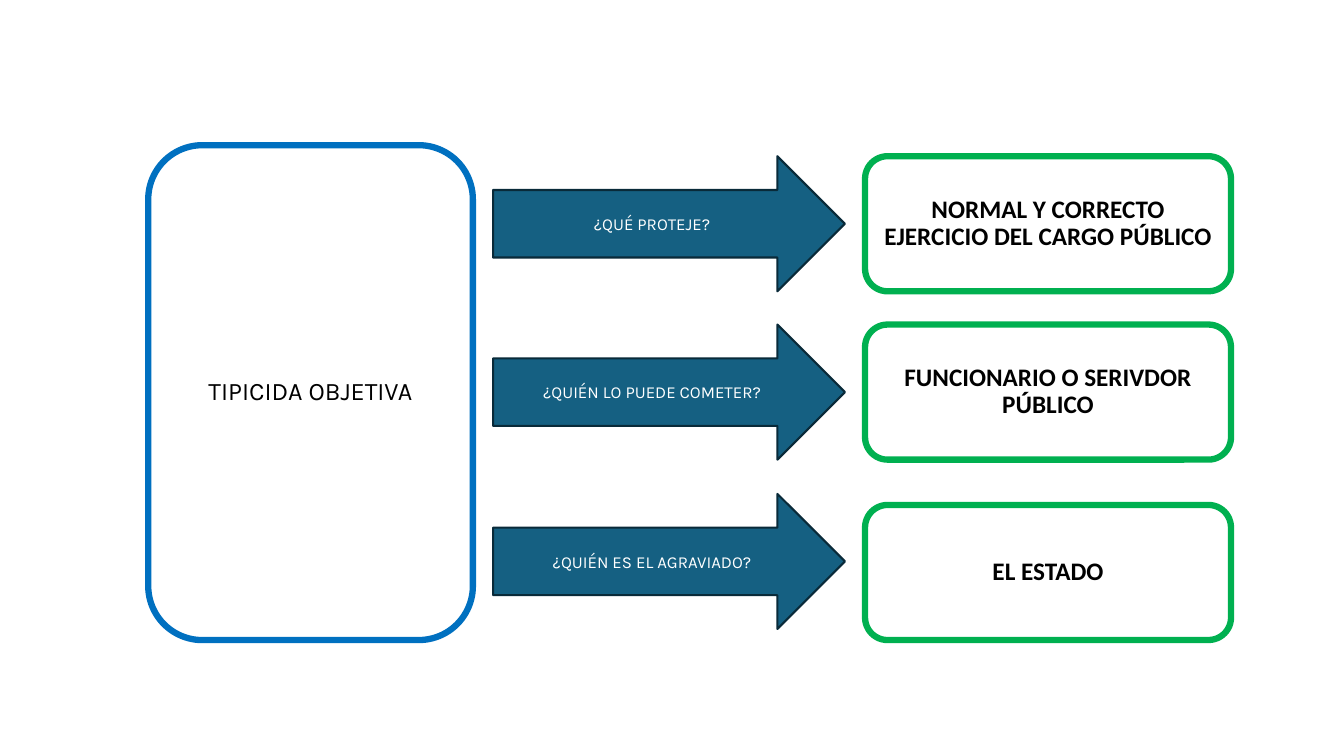
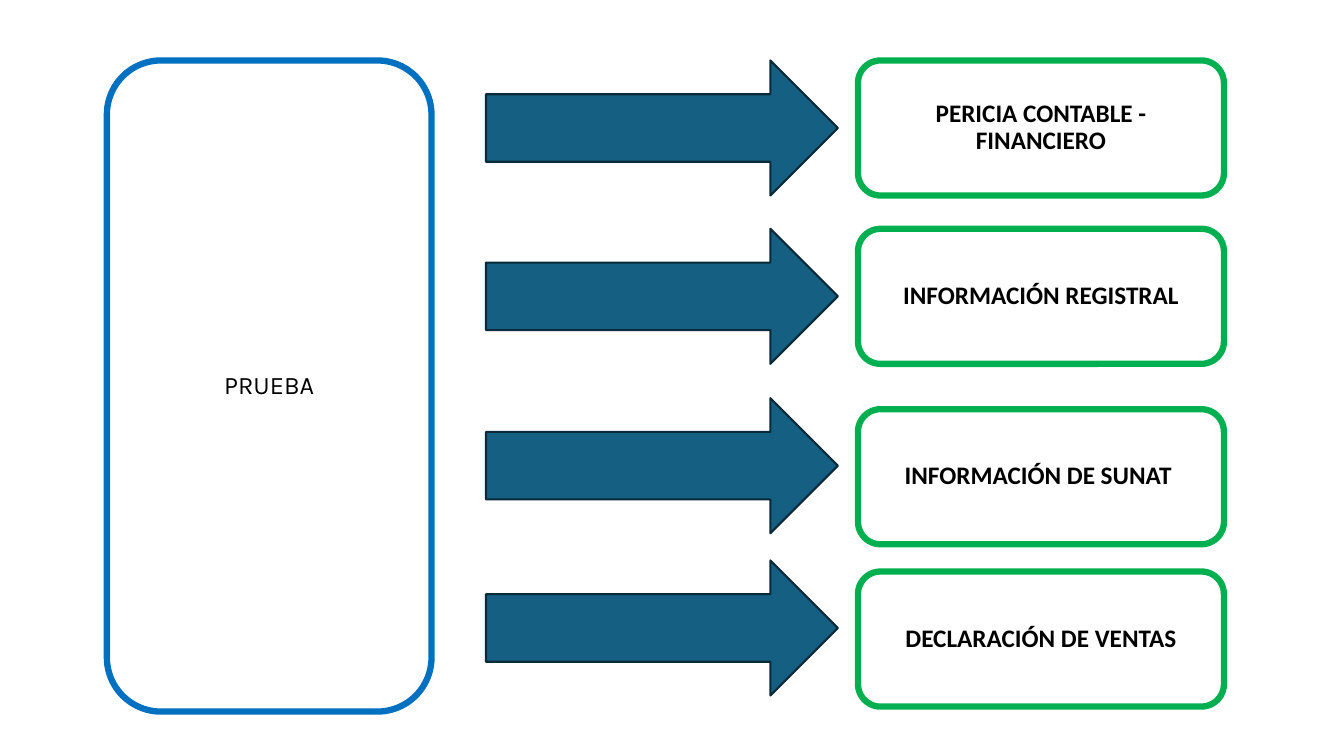
from pptx import Presentation
from pptx.dml.color import RGBColor
from pptx.enum.shapes import MSO_SHAPE
from pptx.enum.text import MSO_ANCHOR, PP_ALIGN
from pptx.util import Inches, Pt

ROUND = MSO_SHAPE.ROUNDED_RECTANGLE
ARROW = MSO_SHAPE.RIGHT_ARROW
MIDDLE = MSO_ANCHOR.MIDDLE
CENTER = PP_ALIGN.CENTER

COLORS = {
    "teal": "156082",
    "navy": "092A39",
    "blue": "0070C0",
    "green": "00B050",
    "black": "000000",
    "white": "FFFFFF",
}
FRAME = {
    "word_wrap": True,
    "vertical_anchor": MIDDLE,
    "margin_left": Inches(0.1),
    "margin_right": Inches(0.1),
    "margin_top": Inches(0.05),
    "margin_bottom": Inches(0.05),
}
STYLES = {
    "topic": {
        "kind": ROUND, "fill": None, "line": "blue", "width": 4.5, "ink": "black",
        "font": {"name": "Karla", "size": Pt(18), "bold": False},
        "para": {"alignment": CENTER, "line_spacing": 0.9},
    },
    "arrow": {
        "kind": ARROW, "fill": "teal", "line": "navy", "width": 1.5, "ink": "white",
        "font": {"name": "Karla", "size": Pt(12), "bold": False},
        "para": {"alignment": CENTER},
    },
    "answer": {
        "kind": ROUND, "fill": None, "line": "green", "width": 4.5, "ink": "black",
        "font": {"name": "Calibri", "size": Pt(18), "bold": True},
        "para": {"alignment": CENTER, "line_spacing": 0.9},
    },
}
ROWS = [(0, 0), (1.67, 1.67), (3.35, 3.46), (4.96, 5.07)]
HEIGHT = 1.34
ARROW_W = 3.49
ANSWER_W = 3.63
ANSWER_X = 3.69

SLIDES = [
    {
        "topic": ("TIPICIDA OBJETIVA", (1.47, 1.44, 3.22, 4.91)),
        "start": (4.89, 1.55),
        "rows": [
            ("¿QUÉ PROTEJE?", "NORMAL Y CORRECTO EJERCICIO DEL CARGO PÚBLICO"),
            ("¿QUIÉN LO PUEDE COMETER?", "FUNCIONARIO O SERIVDOR PÚBLICO"),
            ("¿QUIÉN ES EL AGRAVIADO?", "EL ESTADO"),
        ],
    },
    {
        "topic": ("PRUEBA", (1.06, 0.6, 3.22, 6.46)),
        "start": (4.82, 0.6),
        "rows": [
            ("", "PERICIA CONTABLE - FINANCIERO"),
            ("", "INFORMACIÓN REGISTRAL"),
            ("", "INFORMACIÓN DE SUNAT "),
            ("", "DECLARACIÓN DE VENTAS"),
        ],
    },
]


def color(name):
    return RGBColor.from_string(COLORS[name])


def apply(target, values):
    for key, value in values.items():
        setattr(target, key, value)


def add_text(shape, text, style):
    apply(shape.text_frame, FRAME)
    para = shape.text_frame.paragraphs[0]
    apply(para, style["para"])
    run = para.add_run()
    run.text = text
    apply(run.font, style["font"])
    run.font.color.rgb = color(style["ink"])


def add_box(slide, name, box, text):
    style = STYLES[name]
    shape = slide.shapes.add_shape(style["kind"], *map(Inches, box))
    shape.shadow.inherit = False
    if style["fill"]:
        shape.fill.solid()
        shape.fill.fore_color.rgb = color(style["fill"])
    else:
        shape.fill.background()
    shape.line.color.rgb = color(style["line"])
    shape.line.width = Pt(style["width"])
    if text:
        add_text(shape, text, style)


def add_rows(slide, start, rows):
    left, top = start
    for (arrow_y, answer_y), (ask, answer) in zip(ROWS, rows):
        add_box(slide, "arrow", (left, top + arrow_y, ARROW_W, HEIGHT), ask)
        add_box(slide, "answer", (left + ANSWER_X, top + answer_y, ANSWER_W, HEIGHT), answer)


def add_slide(deck, data):
    slide = deck.slides.add_slide(deck.slide_layouts[6])
    text, box = data["topic"]
    add_box(slide, "topic", box, text)
    add_rows(slide, data["start"], data["rows"])


def main():
    deck = Presentation()
    apply(deck, {"slide_width": Inches(13.33), "slide_height": Inches(7.5)})
    for data in SLIDES:
        add_slide(deck, data)
    deck.save("out.pptx")


if __name__ == "__main__":
    main()
